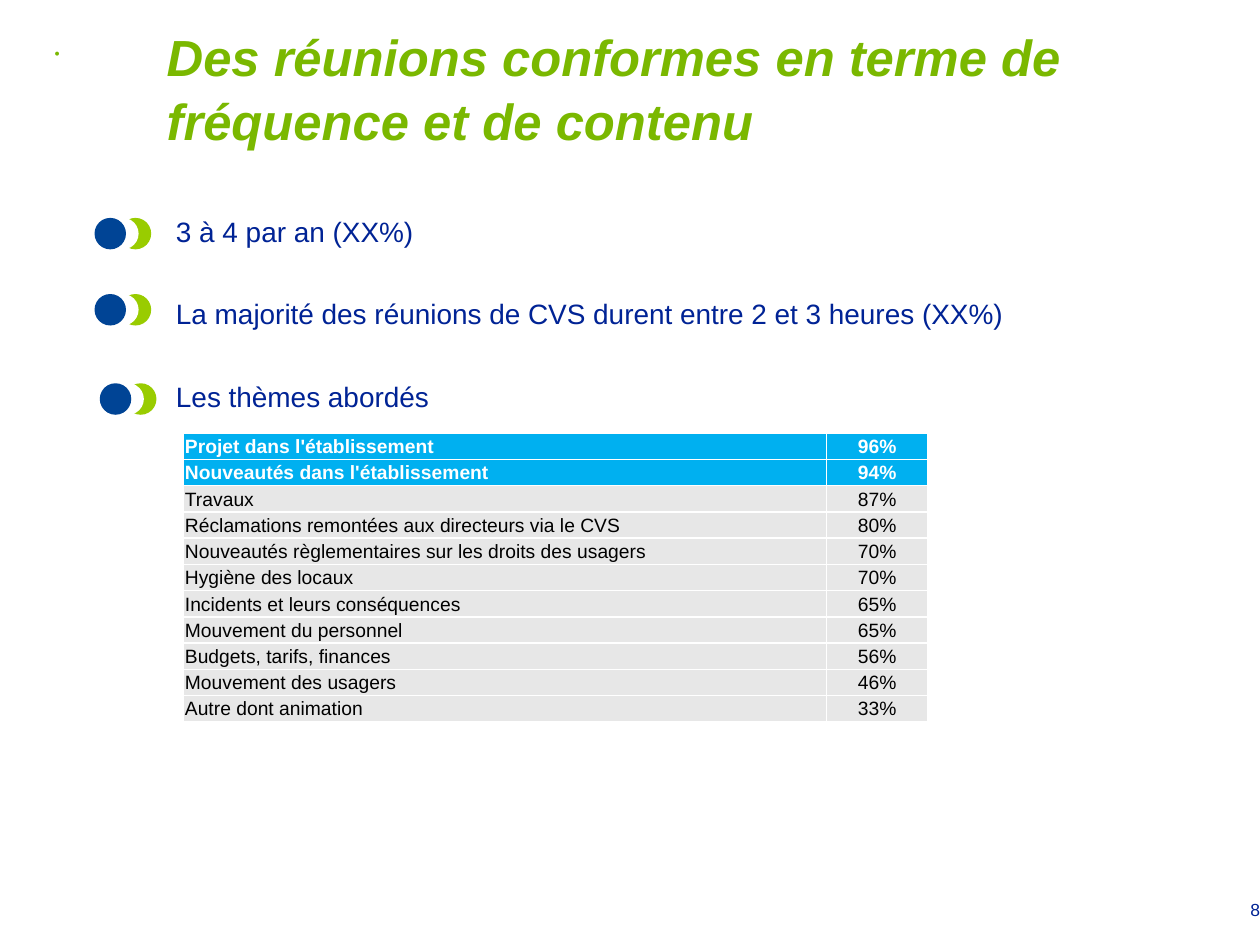
"""Build the slide on the frequency and content of CVS meetings."""
from dataclasses import dataclass
from typing import NamedTuple

from lxml.etree import SubElement
from pptx import Presentation
from pptx.dml.color import RGBColor as Rgb
from pptx.enum.shapes import MSO_SHAPE as Shape
from pptx.enum.text import MSO_ANCHOR as Anchor, MSO_AUTO_SIZE as AutoSize, PP_ALIGN as Align
from pptx.oxml.ns import qn
from pptx.util import Pt


@dataclass(frozen=True)
class Theme:
    font: str = "Arial"
    title_size: float = 29
    body_size: float = 16
    table_size: float = 11
    number_size: float = 10
    line_spacing: float = 1.05
    lime: str = "7AB800"
    crescent: str = "99CC00"
    disc: str = "004495"
    navy: str = "002395"
    white: str = "FFFFFF"
    black: str = "000000"
    highlight: str = "00B0F0"
    grey: str = "E7E7E7"


class Frame(NamedTuple):
    left: float
    top: float
    width: float
    height: float

    def lengths(self) -> list:
        return [Pt(value) for value in self]


class Marker(NamedTuple):
    left: float
    top: float


class Topic(NamedTuple):
    name: str
    share: str
    key: bool = False


THEME = Theme()
TITLE = "Des réunions conformes en terme de fréquence et de contenu"
POINTS = [
    "3 à 4 par an (XX%)",
    "La majorité des réunions de CVS durent entre 2 et 3 heures (XX%)",
    "Les thèmes abordés",
]
MARKERS = [Marker(54, 124.5), Marker(54, 168), Marker(57, 219)]
TOPICS = [
    Topic("Projet dans l'établissement", "96%", True),
    Topic("Nouveautés dans l'établissement", "94%", True),
    Topic("Travaux", "87%"),
    Topic("Réclamations remontées aux directeurs via le CVS", "80%"),
    Topic("Nouveautés règlementaires sur les droits des usagers", "70%"),
    Topic("Hygiène des locaux", "70%"),
    Topic("Incidents et leurs conséquences", "65%"),
    Topic("Mouvement du personnel", "65%"),
    Topic("Budgets, tarifs, finances", "56%"),
    Topic("Mouvement des usagers", "46%"),
    Topic("Autre dont animation", "33%"),
]


def style(para, size: float, color: str, bold: bool = False, italic: bool = False) -> None:
    font = para.font
    font.name, font.size, font.bold, font.italic = THEME.font, Pt(size), bold, italic
    font.color.rgb = Rgb.from_string(color)


def add_title(page, text: str, frame: Frame, indent: float) -> None:
    title = page.shapes.title
    title.left, title.top, title.width, title.height = frame.lengths()
    body = title.text_frame
    body.text, body.word_wrap = text, True
    body.auto_size, body.vertical_anchor = AutoSize.NONE, Anchor.MIDDLE
    para = body.paragraphs[0]
    para.alignment, para.line_spacing = Align.LEFT, THEME.line_spacing
    props = para._p.get_or_add_pPr()
    props.set("marL", str(Pt(indent)))
    props.set("indent", str(-Pt(indent)))
    SubElement(props, qn("a:buSzPct"), val="30000")
    SubElement(props, qn("a:buChar"), char="•")
    style(para, THEME.title_size, THEME.lime, bold=True, italic=True)


def add_points(page, points: list[str], frame: Frame, gap: float) -> None:
    body = page.shapes.add_textbox(*frame.lengths()).text_frame
    body.word_wrap = True
    body.text = "\n".join(points)
    for index, para in enumerate(body.paragraphs):
        para.line_spacing = THEME.line_spacing
        if index:
            para.space_before = Pt(gap)
        style(para, THEME.body_size, THEME.navy)


def add_marker(page, marker: Marker, size: float = 18, step: float = 7.2) -> None:
    group = page.shapes.add_group_shape()
    for place, color in ((2, THEME.crescent), (1, THEME.white), (0, THEME.disc)):
        frame = Frame(marker.left + place * step, marker.top, size, size)
        circle = group.shapes.add_shape(Shape.OVAL, *frame.lengths())
        circle.shadow.inherit = False
        circle.fill.solid()
        circle.fill.fore_color.rgb = Rgb.from_string(color)
        circle.line.fill.background()


def add_borders(cell, color: str, width: float) -> None:
    props = cell._tc.get_or_add_tcPr()
    for index, side in enumerate(("lnL", "lnR", "lnT", "lnB")):
        line = props.makeelement(qn(f"a:{side}"), {"w": str(Pt(width))})
        SubElement(SubElement(line, qn("a:solidFill")), qn("a:srgbClr"), val=color)
        props.insert(index, line)


def fill_cell(cell, text: str, align: Align, key: bool) -> None:
    cell.margin_left = cell.margin_right = cell.margin_top = Pt(0.7)
    cell.margin_bottom = Pt(0)
    cell.vertical_anchor = Anchor.MIDDLE
    cell.fill.solid()
    cell.fill.fore_color.rgb = Rgb.from_string(THEME.highlight if key else THEME.grey)
    add_borders(cell, THEME.white, 1)
    cell.text = text
    para = cell.text_frame.paragraphs[0]
    para.alignment = align
    style(para, THEME.table_size, THEME.white if key else THEME.black, bold=key)


def add_topics(page, topics: list[Topic], left: float, top: float,
               widths: tuple[float, ...], row_height: float) -> None:
    frame = Frame(left, top, sum(widths), row_height * len(topics))
    table = page.shapes.add_table(len(topics), len(widths), *frame.lengths()).table
    table.first_row = table.horz_banding = False
    for column, width in zip(table.columns, widths):
        column.width = Pt(width)
    for row, topic in zip(table.rows, topics):
        row.height = Pt(row_height)
        fill_cell(row.cells[0], topic.name, Align.LEFT, topic.key)
        fill_cell(row.cells[1], topic.share, Align.CENTER, topic.key)


def add_page_number(page, number: str, frame: Frame) -> None:
    body = page.shapes.add_textbox(*frame.lengths()).text_frame
    body.word_wrap, body.margin_right = True, Pt(0)
    body.text = number
    para = body.paragraphs[0]
    para.alignment = Align.RIGHT
    style(para, THEME.number_size, THEME.navy)


def main() -> None:
    deck = Presentation()
    deck.slide_width, deck.slide_height = Pt(720), Pt(540)
    page = deck.slides.add_slide(deck.slide_layouts[5])
    add_page_number(page, "8", Frame(691, 510, 29, 30))
    add_title(page, TITLE, Frame(24, 4.5, 642, 90), indent=64)
    add_points(page, POINTS, Frame(93.5, 118, 618, 284), gap=27)
    for marker in MARKERS:
        add_marker(page, marker)
    add_topics(page, TOPICS, 105, 247.5, widths=(367.4, 57.8), row_height=15)
    deck.save("out.pptx")


if __name__ == "__main__":
    main()
